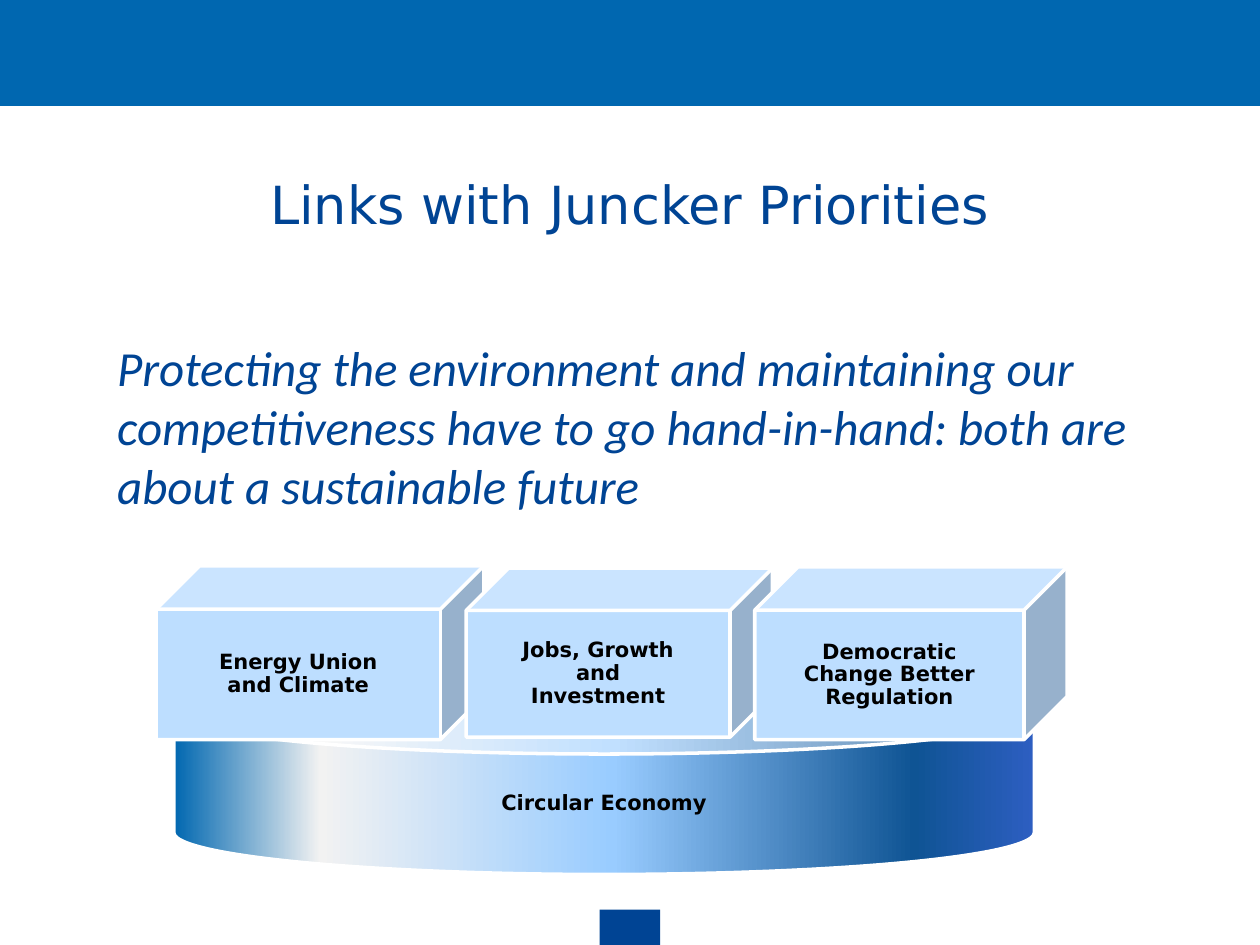
"""Build the slide on links between the circular economy and the priorities."""
from lxml import etree
from pptx import Presentation
from pptx.dml.color import RGBColor
from pptx.enum import shapes, text
from pptx.oxml.ns import qn
from pptx.util import Inches, Pt

NAVY, BLUE, PALE, WHITE = "004494", "0067B0", "BDDEFF", "FFFFFF"
STOPS = [(0, BLUE), (17, "F2F2F2"), (51, "99CCFF"), (86, "0F5494"), (100, "2D5EC1")]
KIND = shapes.MSO_SHAPE


def write(shape, words, size=12, font="DejaVu Sans", color="000000", bold=False,
          italic=False, align=text.PP_ALIGN.CENTER, anchor=text.MSO_ANCHOR.MIDDLE,
          gap=None, pads=None):
    frame = shape.text_frame
    frame.word_wrap = True
    frame.auto_size = text.MSO_AUTO_SIZE.NONE
    frame.vertical_anchor = anchor
    if pads:
        frame.margin_left = frame.margin_right = Inches(pads[0])
        frame.margin_top, frame.margin_bottom = Inches(pads[1]), Inches(pads[2])
    para = frame.paragraphs[0]
    para.alignment = align
    para.space_before = Pt(0)
    para.line_spacing = gap
    run = para.add_run()
    run.text = words
    run.font.size, run.font.name = Pt(size), font
    run.font.bold, run.font.italic = bold, italic
    run.font.color.rgb = RGBColor.from_string(color)


def draw(home, kind, box, fill, line=None):
    shape = home.shapes.add_shape(kind, *map(Inches, box))
    shape.shadow.inherit = False
    shape.fill.solid()
    shape.fill.fore_color.rgb = RGBColor.from_string(fill)
    if line:
        shape.line.color.rgb = RGBColor.from_string(line)
        shape.line.width = Pt(2)
    else:
        shape.line.fill.background()
    return shape


deck = Presentation()
deck.slide_width, deck.slide_height = Inches(10), Inches(7.5)
slide = deck.slides.add_slide(deck.slide_layouts[1])

draw(slide, KIND.RECTANGLE, (4.76, 7.22, 0.48, 0.28), NAVY)
draw(slide, KIND.RECTANGLE, (0, 0, 10, 0.84), BLUE)

title, body = slide.placeholders
for holder, box in ((title, (0.5, 0.99, 9, 1.25)), (body, (0.83, 2.63, 8.39, 3.89))):
    holder.left, holder.top, holder.width, holder.height = map(Inches, box)
write(title, "Links with Juncker Priorities", size=30, color=NAVY)
props = body.text_frame.paragraphs[0]._p.get_or_add_pPr()
props.set("marL", "0")
props.set("indent", "0")
etree.SubElement(props, qn("a:buNone"))
write(body, "Protecting the environment and maintaining our competitiveness have to go "
      "hand-in-hand: both are about a sustainable future", size=28, font="Calibri",
      color=NAVY, italic=True, align=text.PP_ALIGN.LEFT, anchor=text.MSO_ANCHOR.TOP)

group = slide.shapes.add_group_shape()
can = draw(group, KIND.CAN, (1.38, 5.32, 6.83, 1.62), BLUE, WHITE)
can.adjustments[0] = 0.41
can.fill.gradient()
can.fill.gradient_angle = 0
stops = can.fill._fill._gradFill.find(qn("a:gsLst"))
for stop in list(stops):
    stops.remove(stop)
for spot, color in STOPS:
    stop = etree.SubElement(stops, qn("a:gs"), pos=str(spot * 1000))
    etree.SubElement(stop, qn("a:srgbClr"), val=color)
write(can, "Circular Economy", bold=True, gap=0.9, pads=(0.19, 0.36, 0.19))

for words, box in (
    ("Energy Union and Climate", (1.24, 4.49, 2.6, 1.38)),
    ("Jobs, Growth and Investment", (3.7, 4.51, 2.43, 1.34)),
    ("Democratic Change Better Regulation", (5.99, 4.5, 2.48, 1.37)),
):
    cube = draw(group, KIND.CUBE, box, PALE, WHITE)
    write(cube, words, bold=True, gap=0.9, pads=(0.38, 0.41, 0.41))

deck.save("out.pptx")
